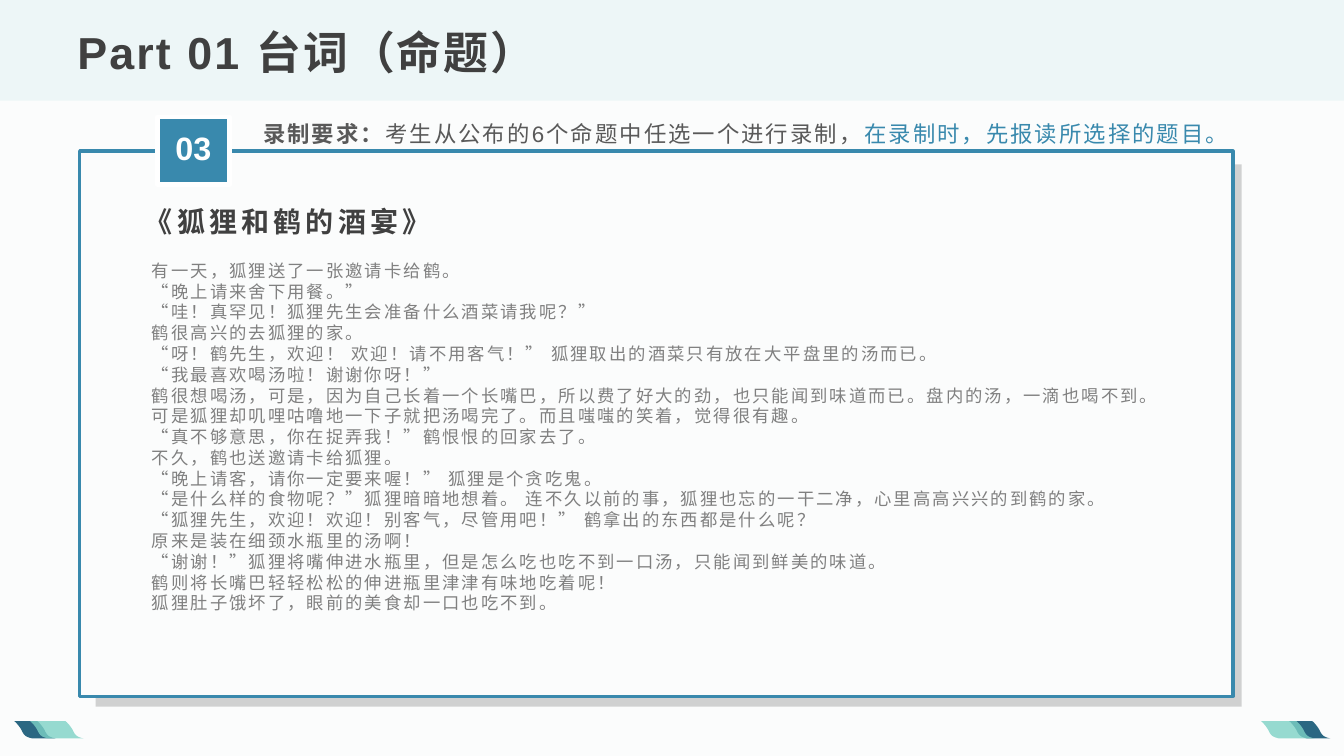
import pptx
import pptx.dml.color
import pptx.enum.lang
import pptx.enum.shapes
import pptx.enum.text
import pptx.oxml
import pptx.oxml.ns
import pptx.util

Cm = pptx.util.Cm
Pt = pptx.util.Pt
ALIGN = pptx.enum.text.PP_ALIGN
ANCHOR = pptx.enum.text.MSO_ANCHOR

COLORS = {
    "paper": "FBFCFC", "band": "EDF6F7", "blue": "3989AD", "navy": "2B6782",
    "mint": "7DD2C6", "shade": "BFBFBF", "white": "FFFFFF",
    "heading": "404040", "label": "595959", "body": "808080",
}

STORY = [
    "有一天，狐狸送了一张邀请卡给鹤。",
    "“晚上请来舍下用餐。”",
    "“哇！真罕见！狐狸先生会准备什么酒菜请我呢？”",
    "鹤很高兴的去狐狸的家。",
    "“呀！鹤先生，欢迎！ 欢迎！请不用客气！” 狐狸取出的酒菜只有放在大平盘里的汤而已。",
    "“我最喜欢喝汤啦！谢谢你呀！”",
    "鹤很想喝汤，可是，因为自己长着一个长嘴巴，所以费了好大的劲，也只能闻到味道而已。盘内的汤，一滴也喝不到。",
    "可是狐狸却叽哩咕噜地一下子就把汤喝完了。而且嗤嗤的笑着，觉得很有趣。",
    "“真不够意思，你在捉弄我！”鹤恨恨的回家去了。",
    "不久，鹤也送邀请卡给狐狸。",
    "“晚上请客，请你一定要来喔！” 狐狸是个贪吃鬼。",
    "“是什么样的食物呢？”狐狸暗暗地想着。 连不久以前的事，狐狸也忘的一干二净，心里高高兴兴的到鹤的家。",
    "“狐狸先生，欢迎！欢迎！别客气，尽管用吧！” 鹤拿出的东西都是什么呢？",
    "原来是装在细颈水瓶里的汤啊！",
    "“谢谢！”狐狸将嘴伸进水瓶里，但是怎么吃也吃不到一口汤，只能闻到鲜美的味道。",
    "鹤则将长嘴巴轻轻松松的伸进瓶里津津有味地吃着呢！",
    "狐狸肚子饿坏了，眼前的美食却一口也吃不到。",
]

LEAF_TOP = 18.17
LEAF_SLANT = 0.46
LEAF_CURVES = [
    [(0, 0), (0, 0), (0.1, 0.08), (0.18, 0.22)],
    [(0.18, 0.22), (0.25, 0.38), (0.3, 0.4), (0.46, 0.44)],
]


def bezier(controls, t):
    weights = ((1 - t) ** 3, 3 * t * (1 - t) ** 2, 3 * t * t * (1 - t), t ** 3)
    return tuple(sum(w * point[axis] for w, point in zip(weights, controls))
                 for axis in (0, 1))


class ScriptSlide:
    """Holds the text style and current slide, and adds each kind of element."""

    style = {"name": "Arial", "bold": False,
             "language_id": pptx.enum.lang.MSO_LANGUAGE_ID.SIMPLIFIED_CHINESE}

    def __init__(self, deck):
        self.slide = deck.slides.add_slide(deck.slide_layouts[6])
        self.paint(self.slide.background.fill, "paper")

    def paint(self, fill, color, alpha=None):
        fill.solid()
        fill.fore_color.rgb = pptx.dml.color.RGBColor.from_string(COLORS[color])
        if alpha:
            element = pptx.oxml.parse_xml(
                f'<a:alpha {pptx.oxml.ns.nsdecls("a")} val="{alpha * 1000}"/>')
            fill._xPr.find(".//" + pptx.oxml.ns.qn("a:srgbClr")).append(element)

    def finish(self, shape, color, alpha=None, line=None):
        shape.shadow.inherit = False
        self.paint(shape.fill, color, alpha)
        if line:
            self.paint(shape.line.fill, line[0])
            shape.line.width = Pt(line[1])
        else:
            shape.line.fill.background()

    def rect(self, box, color, alpha=None, line=None):
        kind = pptx.enum.shapes.MSO_SHAPE.RECTANGLE
        panel = self.slide.shapes.add_shape(kind, *map(Cm, box))
        self.finish(panel, color, alpha, line)

    def leaf(self, left, width, color, alpha=None):
        edge = [bezier(curve, step / 8) for curve in LEAF_CURVES for step in range(9)]
        shift = width - LEAF_SLANT
        outline = edge + [(x + shift, y) for x, y in reversed(edge)]
        points = [(round((left + x) * 1000), round((LEAF_TOP + y) * 1000))
                  for x, y in outline]
        builder = self.slide.shapes.build_freeform(*points[0], scale=Cm(1) / 1000)
        builder.add_line_segments(points[1:], close=True)
        self.finish(builder.convert_to_shape(), color, alpha)

    def text(self, box, paragraphs, frame_format=None, paragraph_format=None,
             spacing=0, **font_format):
        frame = self.slide.shapes.add_textbox(*map(Cm, box)).text_frame
        for key, value in {"word_wrap": True, **(frame_format or {})}.items():
            setattr(frame, key, value)
        for index, runs in enumerate(paragraphs):
            paragraph = frame.add_paragraph() if index else frame.paragraphs[0]
            for key, value in (paragraph_format or {}).items():
                setattr(paragraph, key, value)
            for words, color, run_format in runs:
                run = paragraph.add_run()
                run.text = words
                for key, value in {**self.style, **font_format, **run_format}.items():
                    setattr(run.font, key, value)
                self.paint(run.font.fill, color)
                if spacing:
                    run._r.get_or_add_rPr().set("spc", str(round(spacing * 100)))


def main():
    deck = pptx.Presentation()
    deck.slide_width, deck.slide_height = Cm(33.87), Cm(19.05)
    page = ScriptSlide(deck)

    page.rect((0, 0, 33.87, 2.54), "band")
    for navy_left, mint_left in ((0.36, 0.76), (32.49, 31.78)):
        page.leaf(navy_left, 1.04, "navy")
        page.leaf(mint_left, 1.35, "mint", alpha=80)
    page.rect((2.41, 4.14, 28.88, 13.67), "shade", alpha=70)
    page.rect((2.01, 3.81, 29.06, 13.74), "paper", line=("blue", 2.5))
    page.rect((3.96, 2.95, 1.83, 1.7), "blue", line=("white", 3.5))

    page.text((4.14, 3.02, 1.47, 1.63), [[("03", "white", {})]],
              paragraph_format={"alignment": ALIGN.CENTER, "line_spacing": 1.1},
              size=Pt(23.1), bold=True)
    page.text((2.97, 6.55, 26.95, 10.26), [[(line, "body", {})] for line in STORY],
              {"margin_left": Cm(0.86), "margin_top": 0},
              spacing=1.5, size=Pt(12.4))
    page.text((3.4, 4.65, 11.43, 1.35), [[("《狐狸和鹤的酒宴》", "heading", {})]],
              {"vertical_anchor": ANCHOR.BOTTOM, "margin_bottom": 0},
              {"line_spacing": 1.2}, spacing=3, size=Pt(20), bold=True)
    page.text((1.7, 0.43, 30.48, 1.69), [[("Part 01 台词（命题）", "heading", {})]],
              {"vertical_anchor": ANCHOR.BOTTOM}, {"line_spacing": 0.9},
              spacing=1.5, size=Pt(32), bold=True)
    requirement = [("录制要求：", "label", {"bold": True}),
                   ("考生从公布的6个命题中任选一个进行录制，", "label", {}),
                   ("在录制时，先报读所选择的题目。", "blue", {})]
    page.text((6.38, 2.77, 27.49, 1.07), [requirement],
              paragraph_format={"line_spacing": 1.2}, spacing=1.5, size=Pt(16))
    deck.save("out.pptx")


if __name__ == "__main__":
    main()
